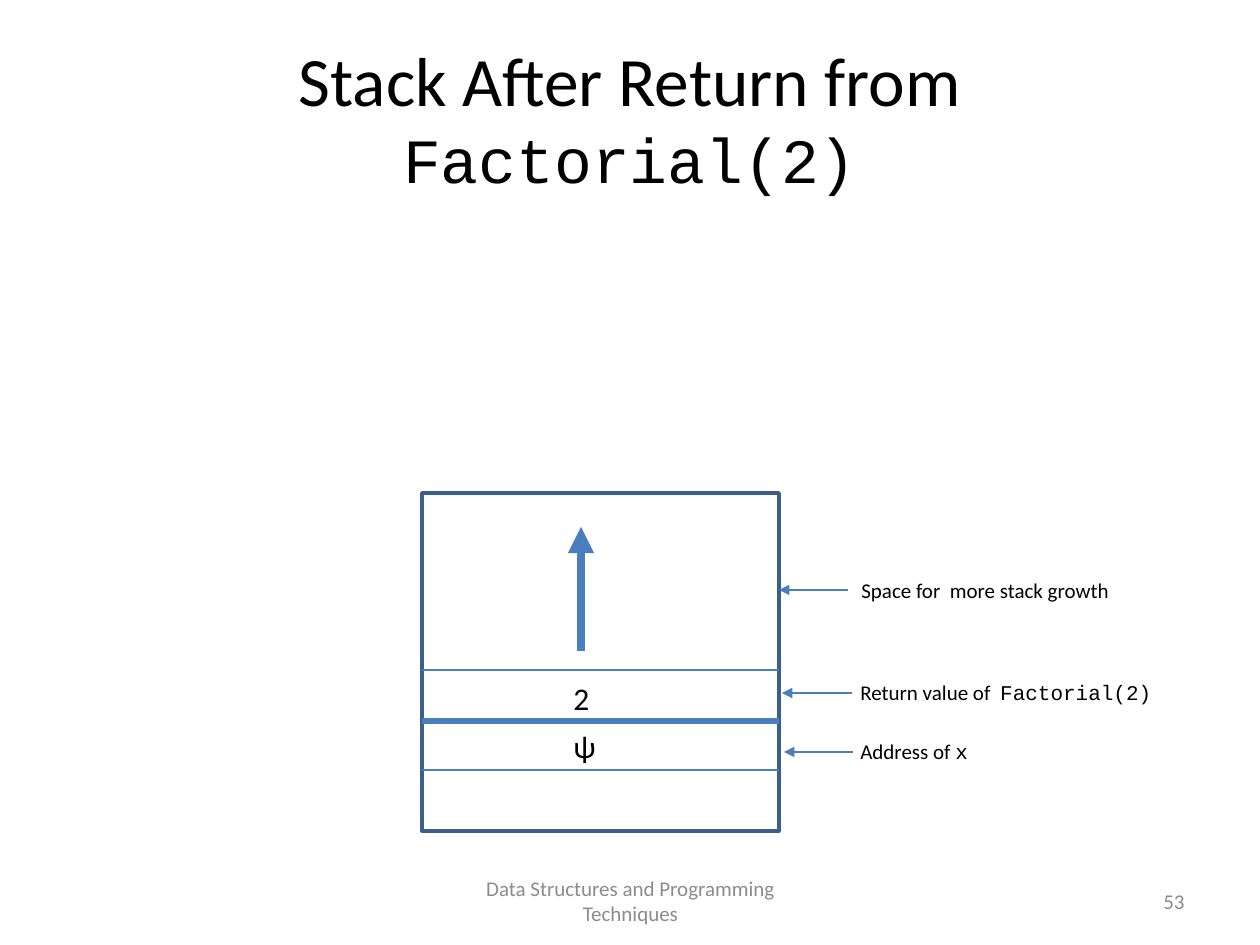
"""Build the slide showing the stack after Factorial(2) returns."""
from lxml import etree
from pptx import Presentation
from pptx.dml.color import RGBColor
from pptx.enum.shapes import MSO_CONNECTOR, MSO_SHAPE
from pptx.enum.text import MSO_ANCHOR, PP_ALIGN
from pptx.oxml.ns import qn
from pptx.util import Pt

STRAIGHT = MSO_CONNECTOR.STRAIGHT
RECTANGLE = MSO_SHAPE.RECTANGLE
TOP, MIDDLE = MSO_ANCHOR.TOP, MSO_ANCHOR.MIDDLE
LEFT, CENTER, RIGHT = PP_ALIGN.LEFT, PP_ALIGN.CENTER, PP_ALIGN.RIGHT

EMU_PER_PX = 914400 / 126
SLIDE_SIZE = (1260, 945)
BODY, CODE = "Calibri", "Courier New"
COLORS = {"text": "000000", "footer": "8C8C8C", "line": "4B7EBC",
          "border": "3A5F8C", "fill": "FFFFFF"}

TITLE = [("Stack After Return from", BODY, 39.6), (" Factorial(2)", CODE, 36)]
TITLE_BOX = (63, 38, 1134, 157)
STACK_BOX = (422, 493, 357, 338)
DIVIDERS = [(670, 1), (721, 3), (770, 1)]
GROWTH_ARROW = (581, 651, 581, 527)
VALUES = [("2", 673), ("ψ", 721)]
LABELS = [
    ([("Space for  more stack growth", BODY, 12)], (849, 571), (848, 779, 590)),
    ([("Return value of  ", BODY, 12), ("Factorial(2)", CODE, 12)], (848, 673), (852, 782, 693)),
    ([("Address of ", BODY, 12), ("x", CODE, 12)], (848, 732), (853, 784, 752)),
]
FOOTERS = [
    ("Data Structures and Programming Techniques", (431, 876, 399, 50), CENTER),
    ("53", (903, 876, 294, 50), RIGHT),
]


def emu(*pixels):
    return [round(value * EMU_PER_PX) for value in pixels]


def rgb(name):
    return RGBColor.from_string(COLORS[name])


def write(shape, runs, align=LEFT, anchor=TOP, color="text"):
    frame = shape.text_frame
    frame.word_wrap = True
    frame.vertical_anchor = anchor
    paragraph = frame.paragraphs[0]
    paragraph.alignment = align
    for text, font, size in runs:
        run = paragraph.add_run()
        run.text = text
        run.font.name = font
        run.font.size = Pt(size)
        run.font.color.rgb = rgb(color)


def add_text(slide, box, runs, **style):
    write(slide.shapes.add_textbox(*emu(*box)), runs, **style)


def add_line(slide, ends, width, arrow=False):
    connector = slide.shapes.add_connector(STRAIGHT, *emu(*ends))
    connector.line.color.rgb = rgb("line")
    connector.line.width = Pt(width)
    if arrow:
        line = connector.line._get_or_add_ln()
        etree.SubElement(line, qn("a:tailEnd"), type="triangle")
    etree.SubElement(connector._element.spPr, qn("a:effectLst"))


def add_stack(slide):
    left, _, width, _ = STACK_BOX
    stack = slide.shapes.add_shape(RECTANGLE, *emu(*STACK_BOX))
    stack.shadow.inherit = False
    stack.fill.solid()
    stack.fill.fore_color.rgb = rgb("fill")
    stack.line.color.rgb = rgb("border")
    stack.line.width = Pt(2)
    for y, weight in DIVIDERS:
        add_line(slide, (left, y, left + width, y), weight)
    add_line(slide, GROWTH_ARROW, 5, arrow=True)
    for text, top in VALUES:
        add_text(slide, (561, top, 79, 50), [(text, BODY, 18)])


def main():
    presentation = Presentation()
    presentation.slide_width, presentation.slide_height = emu(*SLIDE_SIZE)
    slide = presentation.slides.add_slide(presentation.slide_layouts[5])
    title = slide.shapes.title
    title.left, title.top, title.width, title.height = emu(*TITLE_BOX)
    write(title, TITLE, CENTER, MIDDLE)

    add_stack(slide)
    for runs, position, (start, end, y) in LABELS:
        add_text(slide, (*position, 353, 38), runs)
        add_line(slide, (start, y, end, y), 1, arrow=True)
    for text, box, align in FOOTERS:
        add_text(slide, box, [(text, BODY, 12)], align=align, anchor=MIDDLE, color="footer")
    presentation.save("out.pptx")


if __name__ == "__main__":
    main()
